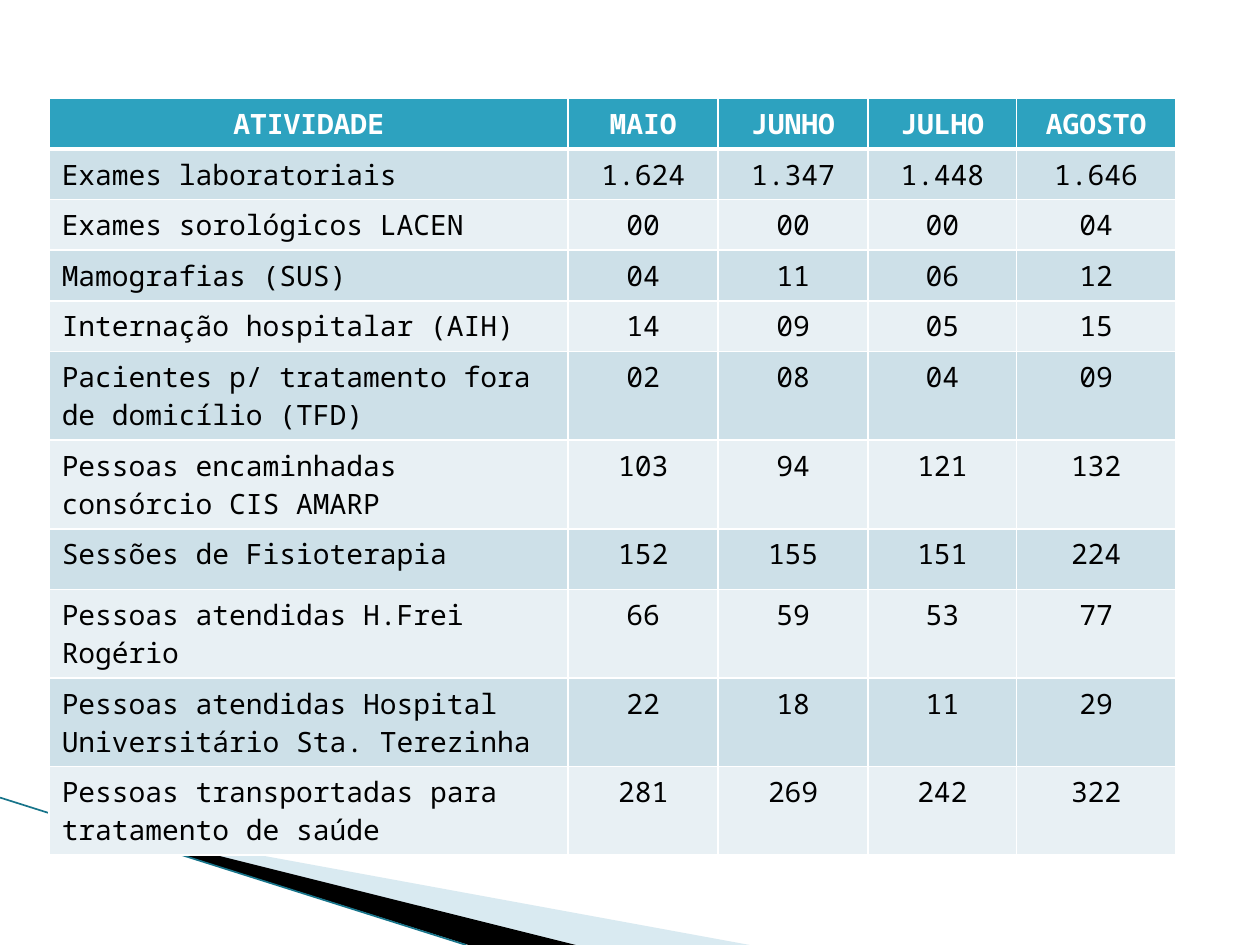
import lxml.etree
import pptx
import pptx.dml.color
import pptx.enum.dml
import pptx.enum.shapes
import pptx.enum.text
import pptx.oxml
import pptx.oxml.ns
import pptx.util
from dataclasses import dataclass

Inches = pptx.util.Inches
Color = pptx.dml.color.RGBColor.from_string
qn = pptx.oxml.ns.qn


@dataclass(frozen=True)
class Theme:
    font: str = "Noto Sans Mono"
    size: int = 16
    header: str = "2DA2BF"
    band_dark: str = "CDE0E8"
    band_light: str = "E8F0F4"
    white: str = "FFFFFF"
    black: str = "000000"
    ribbon: str = "A0CBDC"
    edge: str = "17748A"


theme = Theme()


def write_text(frame, text, color=theme.black, bold=False, centered=False):
    paragraph = frame.paragraphs[0]
    paragraph.alignment = (
        pptx.enum.text.PP_ALIGN.CENTER if centered else pptx.enum.text.PP_ALIGN.LEFT
    )
    run = paragraph.add_run()
    run.text = text
    run.font.name = theme.font
    run.font.size = pptx.util.Pt(theme.size)
    run.font.bold = bold
    run.font.color.rgb = Color(color)


def add_border(cell, side, width):
    properties = cell._tc.get_or_add_tcPr()
    line = lxml.etree.SubElement(properties, qn(f"a:ln{side}"), w=str(pptx.util.Pt(width)))
    fill = lxml.etree.SubElement(line, qn("a:solidFill"))
    lxml.etree.SubElement(fill, qn("a:srgbClr"), val=theme.white)


presentation = pptx.Presentation()
presentation.slide_width = Inches(10)
presentation.slide_height = Inches(7.5)
slide = presentation.slides.add_slide(presentation.slide_layouts[6])

ribbons = [
    ([(0.55, 6.51), (5.95, 7.5), (4.56, 7.5), (0.55, 6.5)], theme.ribbon, 40),
    ([(0.53, 6.49), (4.57, 7.5), (3.72, 7.5), (0.54, 6.5)], theme.black, 100),
]
for points, color, opacity in ribbons:
    corners = [(Inches(x), Inches(y)) for x, y in points]
    builder = slide.shapes.build_freeform(*corners[0])
    builder.add_line_segments(corners[1:], close=True)
    shape = builder.convert_to_shape()
    shape.shadow.inherit = False
    shape.fill.solid()
    shape.fill.fore_color.rgb = Color(color)
    shape.line.fill.background()
    if opacity < 100:
        color_element = shape._element.spPr.find(qn("a:solidFill"))[0]
        lxml.etree.SubElement(color_element, qn("a:alpha"), val=str(opacity * 1000))

edge = slide.shapes.add_connector(
    pptx.enum.shapes.MSO_CONNECTOR.STRAIGHT,
    Inches(0), Inches(6.33), Inches(3.7), Inches(7.5),
)
edge.line.color.rgb = Color(theme.edge)
edge.line.width = pptx.util.Pt(0.95)
lxml.etree.SubElement(edge._element.spPr, qn("a:effectLst"))

rows = [
    ("ATIVIDADE", "MAIO", "JUNHO", "JULHO", "AGOSTO"),
    ("Exames laboratoriais", "1.624", "1.347", "1.448", "1.646"),
    ("Exames sorológicos LACEN", "00", "00", "00", "04"),
    ("Mamografias (SUS)", "04", "11", "06", "12"),
    ("Internação hospitalar (AIH)", "14", "09", "05", "15"),
    ("Pacientes p/ tratamento fora de domicílio (TFD)", "02", "08", "04", "09"),
    ("Pessoas encaminhadas consórcio CIS AMARP", "103", "94", "121", "132"),
    ("Sessões de Fisioterapia", "152", "155", "151", "224"),
    ("Pessoas atendidas H.Frei Rogério", "66", "59", "53", "77"),
    ("Pessoas atendidas Hospital Universitário Sta. Terezinha", "22", "18", "11", "29"),
    ("Pessoas transportadas para tratamento de saúde", "281", "269", "242", "322"),
]
column_widths = [4.12, 1.19, 1.19, 1.18, 1.26]
row_heights = [0.39, 0.38, 0.38, 0.38, 0.38, 0.67, 0.67, 0.48, 0.38, 0.67, 0.67]

table = slide.shapes.add_table(
    len(rows), len(column_widths),
    Inches(0.39), Inches(0.78), Inches(sum(column_widths)), Inches(sum(row_heights)),
).table
for column, width in zip(table.columns, column_widths):
    column.width = Inches(width)
for row, height in zip(table.rows, row_heights):
    row.height = Inches(height)

for row_index, values in enumerate(rows):
    is_header = row_index == 0
    band = theme.band_dark if row_index % 2 else theme.band_light
    for column_index, text in enumerate(values):
        cell = table.cell(row_index, column_index)
        for side in "LRTB":
            under_header = (row_index, side) in ((0, "B"), (1, "T"))
            add_border(cell, side, 3 if under_header else 1)
        cell.fill.solid()
        cell.fill.fore_color.rgb = Color(theme.header if is_header else band)
        write_text(
            cell.text_frame,
            text,
            color=theme.white if is_header else theme.black,
            bold=is_header,
            centered=is_header or column_index > 0,
        )

presentation.save("out.pptx")
